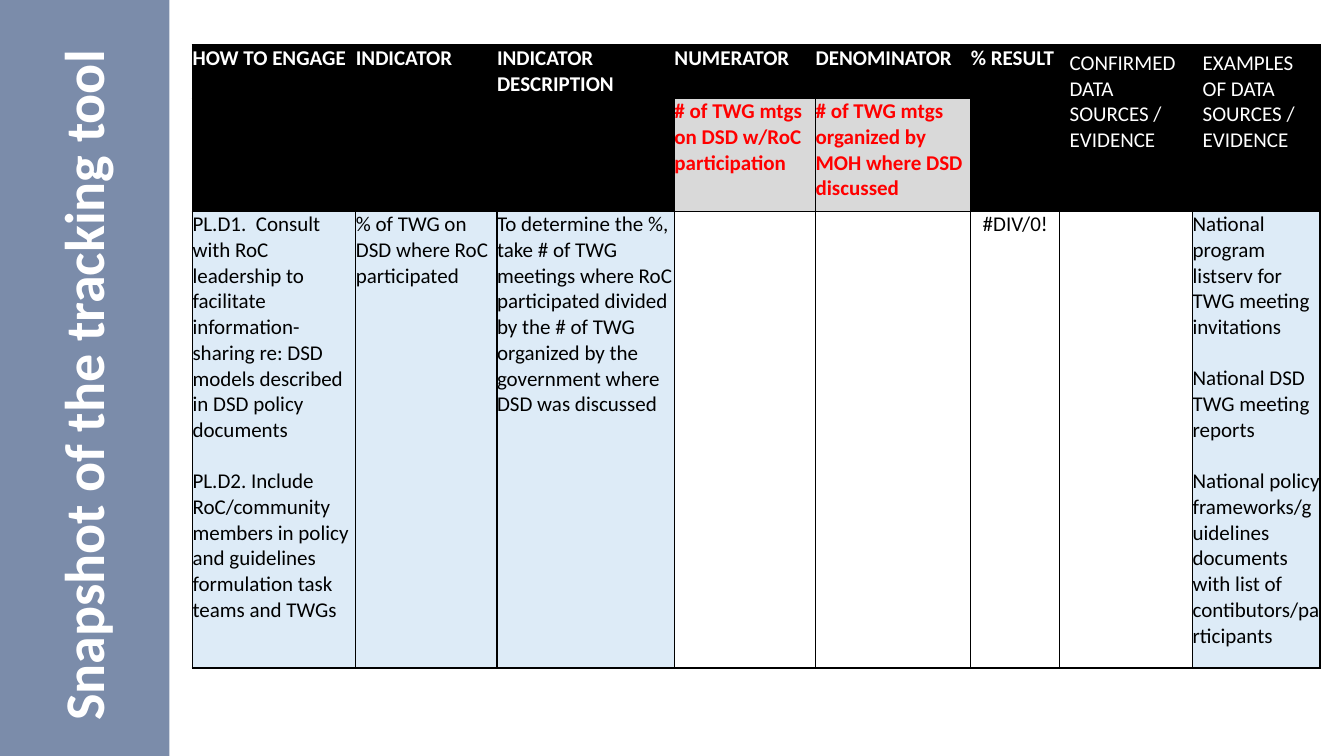
"""Build the slide that shows a snapshot of the tracking tool."""
from dataclasses import dataclass

import lxml.etree
import pptx
import pptx.dml.color
import pptx.enum.shapes
import pptx.enum.text
import pptx.oxml.ns
import pptx.slide
import pptx.table
import pptx.util

Inches = pptx.util.Inches
Pt = pptx.util.Pt
Align = pptx.enum.text.PP_ALIGN


@dataclass(frozen=True)
class Theme:
    """Colours, font and type sizes of the slide."""
    font: str = "Calibri"
    bar: str = "7B8CAA"
    black: str = "000000"
    white: str = "FFFFFF"
    red: str = "FF0000"
    gray: str = "D9D9D9"
    pale: str = "DDEBF7"
    title: float = 40
    body: float = 15
    gap: float = 18.3
    thin: float = 1
    thick: float = 1.5


@dataclass(frozen=True)
class Item:
    """Text and look of one table cell."""
    paras: tuple[str, ...] = ()
    fill: str | None = None
    ink: str = "000000"
    bold: bool = False
    pad: bool = False
    align: Align = Align.LEFT


THEME = Theme()
COLS = (1.62, 1.4, 1.76, 1.4, 1.54, 0.88, 1.32, 1.26)
ROWS = (0.53, 1.07, 4.53)


def head(text: str, bold: bool = True) -> Item:
    """Return a black header cell."""
    return Item((text,), THEME.black, THEME.white, bold, not bold)


def count(text: str) -> Item:
    """Return a gray cell that says what is counted."""
    return Item((text,), THEME.gray, THEME.red, True)


def note(*paras: str) -> Item:
    """Return a pale blue cell."""
    return Item(paras, THEME.pale)


DARK = Item(fill=THEME.black)
GRID = (
    (
        head("HOW TO ENGAGE"), head("INDICATOR"), head("INDICATOR DESCRIPTION"),
        head("NUMERATOR"), head("DENOMINATOR"), head("% RESULT"),
        head("CONFIRMED DATA SOURCES / EVIDENCE", False),
        head("EXAMPLES OF DATA SOURCES / EVIDENCE", False),
    ),
    (
        DARK, DARK, DARK,
        count("# of TWG mtgs on DSD w/RoC participation"),
        count("# of TWG mtgs organized by MOH where DSD discussed"),
        DARK, DARK, DARK,
    ),
    (
        note(
            "PL.D1.  Consult with RoC leadership to facilitate information-sharing "
            "re: DSD models described in DSD policy documents",
            "PL.D2. Include RoC/community members in policy and guidelines "
            "formulation task teams and TWGs",
        ),
        note("% of TWG on DSD where RoC participated"),
        note(
            "To determine the %, take # of TWG meetings where RoC participated "
            "divided by the # of TWG organized by the government where DSD was discussed"
        ),
        Item(), Item(), Item(("#DIV/0!",), align=Align.CENTER), Item(),
        note(
            "National program listserv for TWG meeting invitations",
            "National DSD TWG meeting reports",
            "National policy frameworks/guidelines documents with list of "
            "contibutors/participants",
        ),
    ),
)


def tint(code: str) -> pptx.dml.color.RGBColor:
    """Turn a hex code into a colour."""
    return pptx.dml.color.RGBColor.from_string(code)


def style(para, size: float, ink: str, bold: bool, align: Align) -> None:
    """Set the font and alignment of a paragraph."""
    para.alignment = align
    para.font.name = THEME.font
    para.font.size = Pt(size)
    para.font.bold = bold
    para.font.color.rgb = tint(ink)


def edge(cell: pptx.table._Cell, side: str, width: float) -> None:
    """Draw one black border of a cell."""
    name = pptx.oxml.ns.qn
    props = cell._tc.get_or_add_tcPr()
    line = lxml.etree.SubElement(props, name(f"a:ln{side}"), w=str(int(Pt(width))))
    fill = lxml.etree.SubElement(line, name("a:solidFill"))
    lxml.etree.SubElement(fill, name("a:srgbClr"), val=THEME.black)


def fill_cell(cell: pptx.table._Cell, item: Item, outer: str) -> None:
    """Set the borders, fill and text of a cell."""
    for side in "LRTB":
        edge(cell, side, THEME.thick if side in outer else THEME.thin)
    if item.fill:
        cell.fill.solid()
        cell.fill.fore_color.rgb = tint(item.fill)
    else:
        cell.fill.background()
    cell.margin_left = cell.margin_right = Inches(0.1 if item.pad else 0)
    cell.margin_top = cell.margin_bottom = Inches(0.05 if item.pad else 0)
    frame = cell.text_frame
    for i, text in enumerate(item.paras):
        para = frame.add_paragraph() if i else frame.paragraphs[0]
        para.text = text
        style(para, THEME.body, item.ink, item.bold, item.align)
        if i:
            para.space_before = Pt(THEME.gap)


def add_grid(slide: pptx.slide.Slide) -> None:
    """Add the table of indicators."""
    table = slide.shapes.add_table(
        len(ROWS), len(COLS), Inches(1.91), Inches(0.45),
        Inches(sum(COLS)), Inches(sum(ROWS)),
    ).table
    table.first_row = table.horz_banding = False
    for col, width in zip(table.columns, COLS):
        col.width = Inches(width)
    for row, height in zip(table.rows, ROWS):
        row.height = Inches(height)
    for r, line in enumerate(GRID):
        for c, item in enumerate(line):
            sides = {"L": c == 0, "R": c == len(COLS) - 1,
                     "T": r == 0, "B": r == len(ROWS) - 1}
            outer = "".join(side for side, on in sides.items() if on)
            fill_cell(table.cell(r, c), item, outer)
    for c in (6, 7):
        table.cell(0, c).merge(table.cell(1, c))


def add_bar(slide: pptx.slide.Slide) -> None:
    """Add the colour bar at the left."""
    bar = slide.shapes.add_shape(
        pptx.enum.shapes.MSO_SHAPE.RECTANGLE, 0, 0, Inches(1.68), Inches(7.5)
    )
    bar.shadow.inherit = False
    bar.fill.solid()
    bar.fill.fore_color.rgb = tint(THEME.bar)
    bar.line.fill.background()


def set_title(slide: pptx.slide.Slide) -> None:
    """Turn the title upright and bring it to the front."""
    title = slide.shapes.title
    title.left, title.top = Inches(-2.69), Inches(3.36)
    title.width, title.height = Inches(7.01), Inches(0.77)
    title.rotation = 270
    frame = title.text_frame
    frame.text = "Snapshot of the tracking tool"
    frame.word_wrap = True
    frame.auto_size = pptx.enum.text.MSO_AUTO_SIZE.SHAPE_TO_FIT_TEXT
    frame.vertical_anchor = pptx.enum.text.MSO_ANCHOR.TOP
    style(frame.paragraphs[0], THEME.title, THEME.white, True, Align.LEFT)
    title.element.getparent().append(title.element)


def main() -> None:
    """Build and save the deck."""
    deck = pptx.Presentation()
    deck.slide_width, deck.slide_height = Inches(13.33), Inches(7.5)
    slide = deck.slides.add_slide(deck.slide_layouts[5])
    add_bar(slide)
    add_grid(slide)
    set_title(slide)
    deck.save("out.pptx")


if __name__ == "__main__":
    main()
